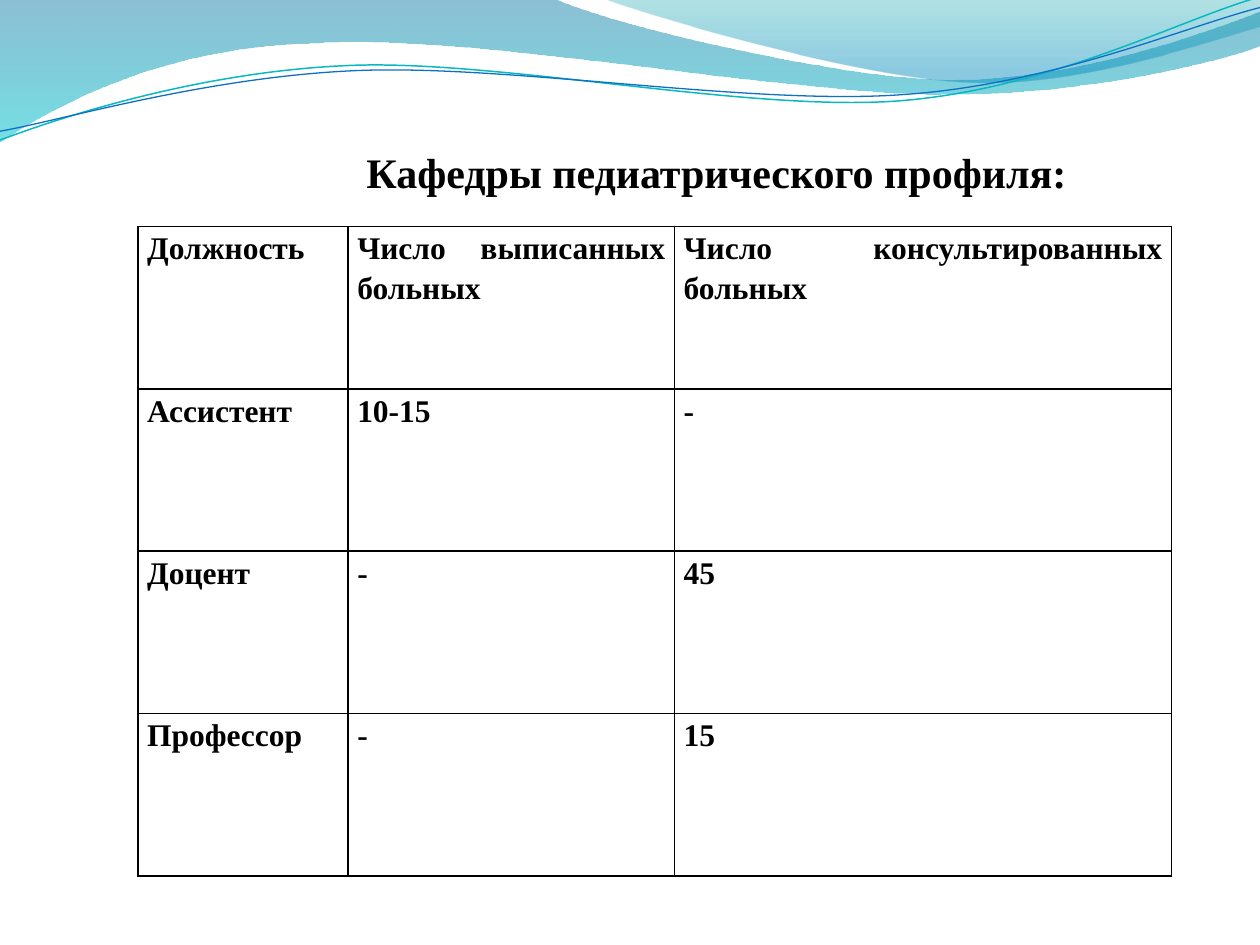
from itertools import chain, product

from lxml.etree import SubElement as Sub
from pptx import Presentation
from pptx.dml.color import RGBColor as Rgb
from pptx.enum.text import MSO_ANCHOR as Anchor, MSO_AUTO_SIZE as Fit, PP_ALIGN as Align
from pptx.oxml.ns import qn
from pptx.util import Pt

COLORS = {
    "text": "000000", "border": "000000",
    "wave_top": "0074A1", "wave_bottom": "00C6CF",
    "fold_top": "00A1A9", "fold_bottom": "008BBF",
    "teal_line": "0AB8BF", "blue_line": "0F6FC6",
}

# Outlines in points: one point per step is a straight line, three are a curve
WAVE = [
    [(0, 0)], [(316.8, -0.7)],
    [(342.7, 12.2), (478.1, 45.4), (545.8, 45.4)],
    [(614.2, 45.4), (689.8, 18.7), (720, 6.5)],
    [(720.7, 25.9)],
    [(707.8, 31.7), (626.4, 54.7), (537.1, 54)],
    [(447.8, 54), (275, 20.2), (185, 24.5)],
    [(92.9, 25.9), (33.1, 59.8), (-0.7, 81.4)],
]
FOLD = [
    [(344.9, -0.7)],
    [(366.5, 7.9), (491, 44.6), (553.7, 46.8)],
    [(616.3, 49.7), (691.9, 23), (720, 15.1)],
    [(720, 0)],
]
# The two thin lines are drawn level and then tilted
TILT = 357.3
TEAL_LINE = [
    [(-1.4, 63.1)],
    [(33.8, 51.7), (114.1, 29.4), (199.8, 29.9)],
    [(284.8, 30.3), (425.8, 67.3), (512.4, 64.9)],
    [(599.1, 62.4), (676.5, 25.7), (720.2, 15.6)],
]
BLUE_LINE = [
    [(-1.1, 58)],
    [(32.9, 53.8), (118.3, 32.5), (204.1, 33)],
    [(290.6, 33.4), (428.9, 63.8), (515.5, 61.4)],
    [(601.4, 59.6), (678.4, 30.1), (721.4, 21.3)],
]

WORKLOAD = [
    ["Должность", "Число выписанных больных", "Число консультированных больных"],
    ["Ассистент", "10-15", "-"],
    ["Доцент", "-", "45"],
    ["Профессор", "-", "15"],
]


def write(frame, text, size=18, indent=0, spacing=None, after=None):
    paragraph = frame.paragraphs[0]
    paragraph.alignment = Align.JUSTIFY
    if spacing:
        paragraph.line_spacing = spacing
    if after:
        paragraph.space_after = Pt(after)
    if indent:
        paragraph._p.get_or_add_pPr().set("indent", str(Pt(indent)))
    run = paragraph.add_run()
    run.text = text
    run.font.name, run.font.size, run.font.bold = "Times New Roman", Pt(size), True
    run.font.color.rgb = Rgb.from_string(COLORS["text"])


class Deck:
    def __init__(self, width, height):
        self.file = Presentation()
        self.file.slide_width, self.file.slide_height = Pt(width), Pt(height)
        self.slide = self.file.slides.add_slide(self.file.slide_layouts[6])

    def outline(self, steps, close):
        start, *rest = [(Pt(x), Pt(y)) for x, y in chain.from_iterable(steps)]
        builder = self.slide.shapes.build_freeform(*start, scale=1.0)
        builder.add_line_segments(rest, close=close)
        shape = builder.convert_to_shape()
        shape.shadow.inherit = False
        # Join each group of three segments into one Bezier curve
        segments = iter(list(shape._element.iter(qn("a:lnTo"))))
        for step in steps[1:]:
            first, *others = [next(segments) for _ in step]
            if others:
                first.tag = qn("a:cubicBezTo")
            for other in others:
                first.append(other[0])
                other.getparent().remove(other)
        return shape

    def band(self, steps, stops):
        """Filled band with a see-through gradient from top to bottom."""
        shape = self.outline(steps, close=True)
        shape.line.fill.background()
        shape.fill.gradient()
        shape.fill.gradient_angle = 270
        for stop, (position, color, opacity) in zip(shape.fill.gradient_stops, stops):
            stop.position = position
            stop.color.rgb = Rgb.from_string(COLORS[color])
            tint = stop._gs.find(qn("a:srgbClr"))
            Sub(tint, qn("a:alpha"), val=str(opacity * 1000))

    def curve(self, steps, color, width):
        shape = self.outline(steps, close=False)
        shape.rotation = TILT
        shape.fill.background()
        shape.line.color.rgb = Rgb.from_string(COLORS[color])
        shape.line.width = Pt(width)

    def title(self, text, left, top, width, height):
        box = self.slide.shapes.add_textbox(Pt(left), Pt(top), Pt(width), Pt(height))
        frame = box.text_frame
        frame.word_wrap = True
        frame.auto_size = Fit.SHAPE_TO_FIT_TEXT
        frame.vertical_anchor = Anchor.MIDDLE
        write(frame, text, size=24, indent=36)

    def border(self, cell):
        properties = cell._tc.get_or_add_tcPr()
        for side in ("lnL", "lnR", "lnT", "lnB"):
            line = Sub(properties, qn(f"a:{side}"), w=str(Pt(1)))
            Sub(Sub(line, qn("a:solidFill")), qn("a:srgbClr"), val=COLORS["border"])

    def table(self, rows, left, top, widths, row_height):
        grid = self.slide.shapes.add_table(
            len(rows), len(widths), Pt(left), Pt(top),
            Pt(sum(widths)), Pt(row_height * len(rows))).table
        grid.first_row = grid.horz_banding = False
        for column, width in zip(grid.columns, widths):
            column.width = Pt(width)
        for row in grid.rows:
            row.height = Pt(row_height)
        for r, c in product(range(len(rows)), range(len(widths))):
            cell = grid.cell(r, c)
            cell.margin_left = cell.margin_right = Pt(5.3)
            cell.margin_top = cell.margin_bottom = 0
            self.border(cell)
            cell.fill.background()
            write(cell.text_frame, rows[r][c], spacing=1.15, after=10)


def main():
    deck = Deck(720, 540)
    # Waves along the top
    deck.band(WAVE, [(0, "wave_top", 45), (1, "wave_bottom", 55)])
    deck.band(FOLD, [(0, "fold_top", 30), (0.8, "fold_bottom", 45)])
    deck.curve(TEAL_LINE, "teal_line", 0.85)
    deck.curve(BLUE_LINE, "blue_line", 0.75)
    # Workload by position
    deck.table(WORKLOAD, 78.8, 129.4, [120.1, 186.5, 284.1], 92.8)
    deck.title("Кафедры педиатрического профиля:", 166.3, 80, 453, 36)
    deck.file.save("out.pptx")


if __name__ == "__main__":
    main()
